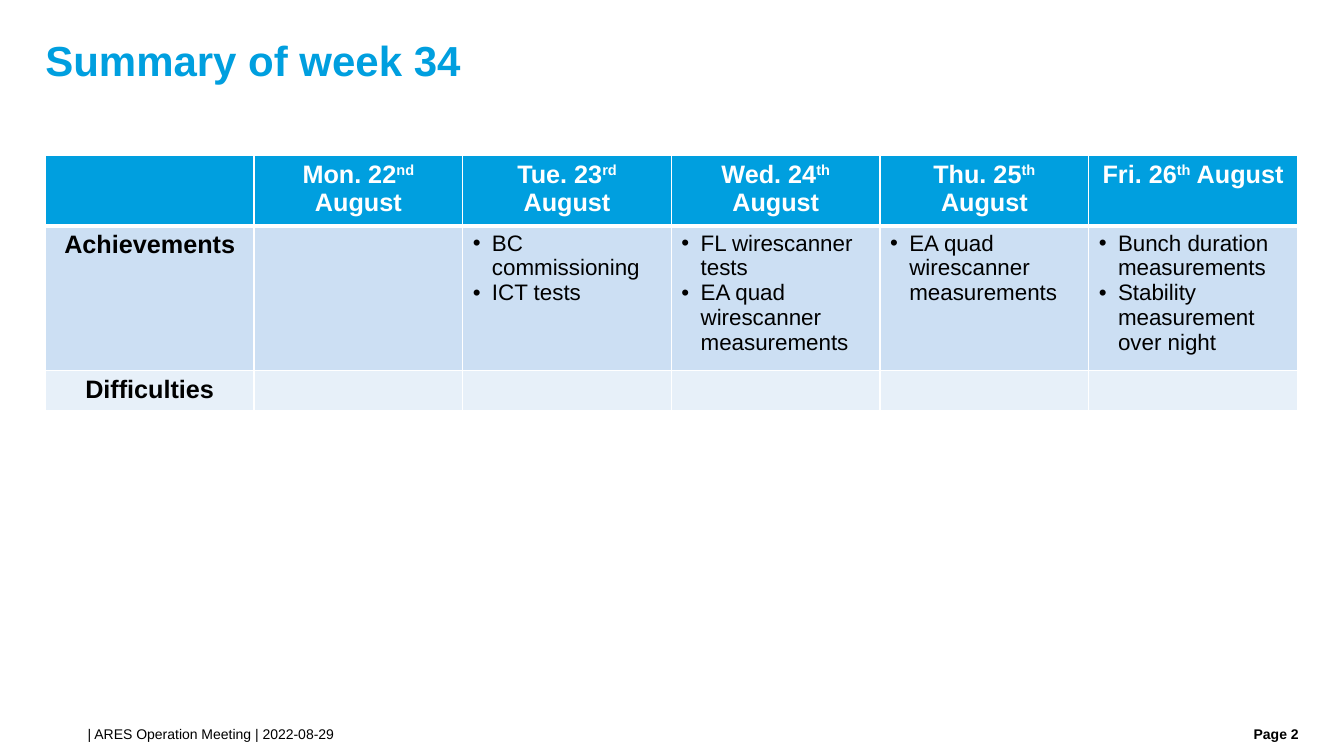
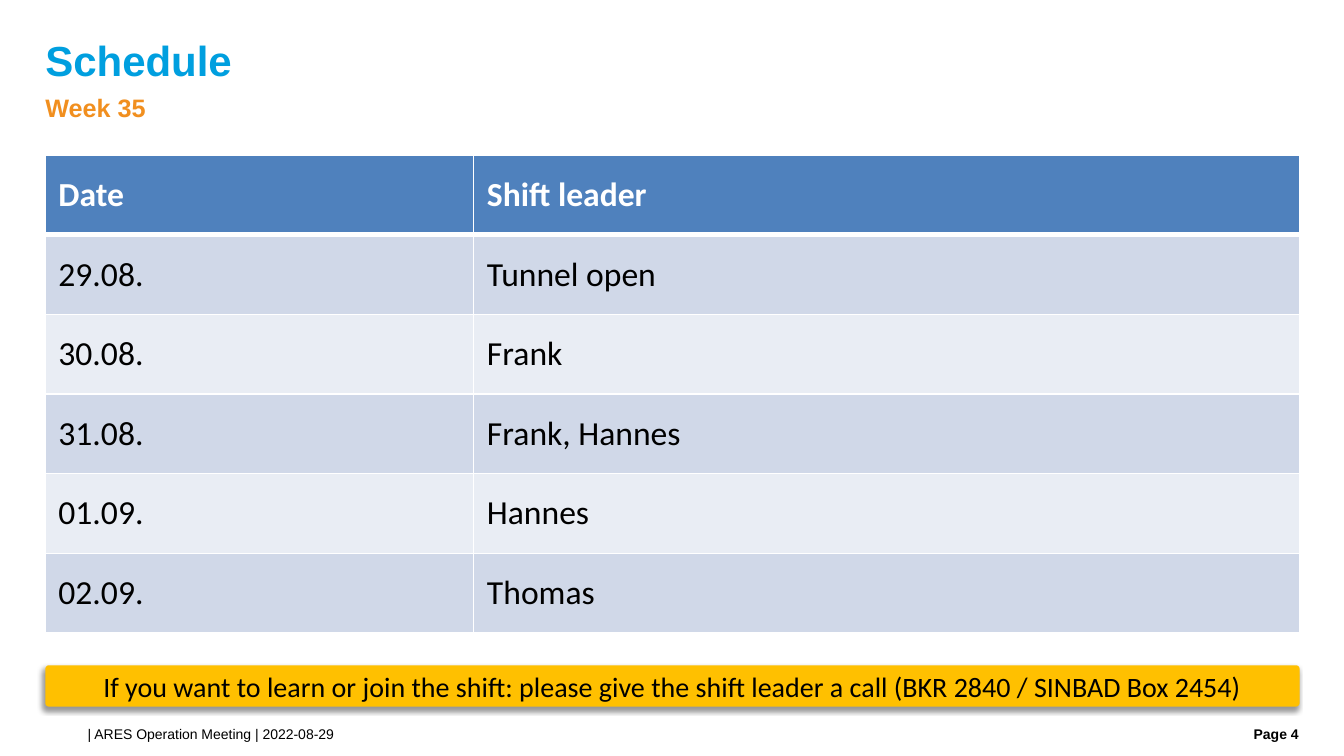
from lxml import etree
from pptx import Presentation, util as u
from pptx.dml.color import RGBColor
from pptx.enum import shapes, text
from pptx.oxml import parse_xml
from pptx.oxml.ns import qn

SCALE = 9144  # EMU per px, 100 px to the inch
LEFT, WIDTH = 45, 1244
TABLE_TOP = 154

BLACK = RGBColor(0x00, 0x00, 0x00)
WHITE = RGBColor(0xFF, 0xFF, 0xFF)
CYAN = RGBColor(0x00, 0x9F, 0xDF)
ORANGE = RGBColor(0xF1, 0x8F, 0x1F)
AMBER = RGBColor(0xFF, 0xC0, 0x00)
STEEL = RGBColor(0x4F, 0x81, 0xBD)
SUMMARY_BANDS = (RGBColor(0xCC, 0xDF, 0xF3), RGBColor(0xE7, 0xF0, 0xF9))
SCHEDULE_BANDS = (RGBColor(0xD0, 0xD8, 0xE8), RGBColor(0xE9, 0xED, 0xF4))

A_NS = "http://schemas.openxmlformats.org/drawingml/2006/main"
FOOTER = "| ARES Operation Meeting | 2022-08-29"

DAYS = ["Mon. 22^nd^ August", "Tue. 23^rd^ August", "Wed. 24^th^ August",
        "Thu. 25^th^ August", "Fri. 26^th^ August"]
ACHIEVEMENTS = [
    [],
    ["BC commissioning", "ICT tests"],
    ["FL wirescanner tests", "EA quad wirescanner measurements"],
    ["EA quad wirescanner measurements"],
    ["Bunch duration measurements", "Stability measurement over night"],
]
SHIFTS = [
    ("Date", "Shift leader"),
    ("29.08.", "Tunnel open"),
    ("30.08.", "Frank"),
    ("31.08.", "Frank, Hannes"),
    ("01.09.", "Hannes"),
    ("02.09.", "Thomas"),
]


def px(n):
    return u.Emu(n * SCALE)


def add_bullet(p):
    pPr = p._p.get_or_add_pPr()
    pPr.set("marL", str(px(19)))
    pPr.set("indent", str(px(-19)))
    etree.SubElement(pPr, qn("a:buFont"), typeface="Arial")
    etree.SubElement(pPr, qn("a:buChar"), char="•")


def write(tf, lines, size=18, color=BLACK, bold=False, font="Arial",
          align=text.PP_ALIGN.LEFT, spacing=None, bullet=False):
    """Write one paragraph per line; text between carets is superscript."""
    for i, line in enumerate(lines):
        p = tf.add_paragraph() if i else tf.paragraphs[0]
        p.alignment = align
        if spacing:
            p.line_spacing = spacing
        if bullet:
            add_bullet(p)
        for k, part in enumerate(line.split("^")):
            r = p.add_run()
            r.text = part
            r.font.size = u.Pt(size)
            r.font.name = font
            r.font.bold = bold
            r.font.color.rgb = color
            if k % 2:
                r._r.get_or_add_rPr().set("baseline", "30000")


def add_text(s, box, line, anchor=text.MSO_ANCHOR.TOP, **fmt):
    tf = s.shapes.add_textbox(*map(px, box)).text_frame
    tf.word_wrap = True
    tf.margin_left = tf.margin_right = tf.margin_top = tf.margin_bottom = 0
    tf.vertical_anchor = anchor
    write(tf, [line], **fmt)


def add_slide(prs, title, page):
    """Add a slide with the shared title, footer and page number."""
    s = prs.slides.add_slide(prs.slide_layouts[6])
    add_text(s, (LEFT, 38, WIDTH, 49), title, anchor=text.MSO_ANCHOR.MIDDLE,
             size=30, color=CYAN, bold=True, spacing=0.9)
    add_text(s, (87, 720, 1088, 20), FOOTER, size=10)
    add_text(s, (1186, 720, 102, 20), f"Page {page}", size=10, bold=True,
             align=text.PP_ALIGN.RIGHT)
    return s


def set_borders(cell, top, bottom):
    tcPr = cell._tc.get_or_add_tcPr()
    widths = {"L": 1, "R": 1, "T": top, "B": bottom}
    for i, (side, width) in enumerate(widths.items()):
        tcPr.insert(i, parse_xml(
            f'<a:ln{side} xmlns:a="{A_NS}" w="{u.Pt(width)}"><a:solidFill>'
            f'<a:srgbClr val="{WHITE}"/></a:solidFill></a:ln{side}>'))


def add_grid(s, widths, heights, head_fill, bands, head_line):
    """Add an empty table with a header row, banded rows and white rules."""
    tbl = s.shapes.add_table(len(heights), len(widths), px(LEFT), px(TABLE_TOP),
                             px(sum(widths)), px(sum(heights))).table
    tbl.first_row = tbl.horz_banding = False
    for col, width in zip(tbl.columns, widths):
        col.width = px(width)
    for i, (row, height) in enumerate(zip(tbl.rows, heights)):
        row.height = px(height)
        for cell in row.cells:
            cell.fill.solid()
            cell.fill.fore_color.rgb = bands[(i - 1) % 2] if i else head_fill
            set_borders(cell, top=head_line if i == 1 else 1,
                        bottom=1 if i else head_line)
    return tbl


def add_banner(s, box, line):
    sp = s.shapes.add_shape(shapes.MSO_SHAPE.ROUNDED_RECTANGLE, *map(px, box))
    sp.adjustments[0] = 0.085
    sp.fill.solid()
    sp.fill.fore_color.rgb = AMBER
    sp.line.fill.background()
    sp._element.spPr.append(parse_xml(
        f'<a:effectLst xmlns:a="{A_NS}"><a:outerShdw blurRad="{u.Pt(4)}" '
        f'dist="{u.Pt(3)}" dir="8100000" rotWithShape="0">'
        f'<a:srgbClr val="{BLACK}"><a:alpha val="40000"/></a:srgbClr>'
        '</a:outerShdw></a:effectLst>'))
    tf = sp.text_frame
    tf.word_wrap = True
    tf.vertical_anchor = text.MSO_ANCHOR.MIDDLE
    write(tf, [line], size=20, font="Calibri", align=text.PP_ALIGN.CENTER)


def build_summary(prs):
    s = add_slide(prs, "Summary of week 34", 2)
    tbl = add_grid(s, [207] * 6, [65, 134, 37], CYAN, SUMMARY_BANDS, 3)
    label = dict(bold=True, align=text.PP_ALIGN.CENTER)
    for i, name in enumerate(("Achievements", "Difficulties"), 1):
        write(tbl.cell(i, 0).text_frame, [name], **label)
    for j, (day, items) in enumerate(zip(DAYS, ACHIEVEMENTS), 1):
        write(tbl.cell(0, j).text_frame, [day], color=WHITE, **label)
        write(tbl.cell(1, j).text_frame, items, size=16, bullet=True)


def build_schedule(prs):
    s = add_slide(prs, "Schedule", 4)
    add_text(s, (LEFT, 89, WIDTH, 41), "Week 35", color=ORANGE, bold=True,
             spacing=1.1)
    tbl = add_grid(s, [425, 819], [79] * len(SHIFTS), STEEL, SCHEDULE_BANDS, 4)
    for i, row in enumerate(SHIFTS):
        for cell, entry in zip(tbl.rows[i].cells, row):
            cell.vertical_anchor = text.MSO_ANCHOR.MIDDLE
            cell.margin_left = cell.margin_right = px(13)
            cell.margin_top = cell.margin_bottom = px(7)
            write(cell.text_frame, [entry], size=24, font="Calibri",
                  bold=i == 0, color=BLACK if i else WHITE)
    add_banner(s, (LEFT, 660, WIDTH, 41),
               "If you want to learn or join the shift: please give the shift "
               "leader a call (BKR 2840 / SINBAD Box 2454)")


def main():
    prs = Presentation()
    prs.slide_width, prs.slide_height = px(1333), px(750)
    build_summary(prs)
    build_schedule(prs)
    prs.save("out.pptx")


if __name__ == "__main__":
    main()
